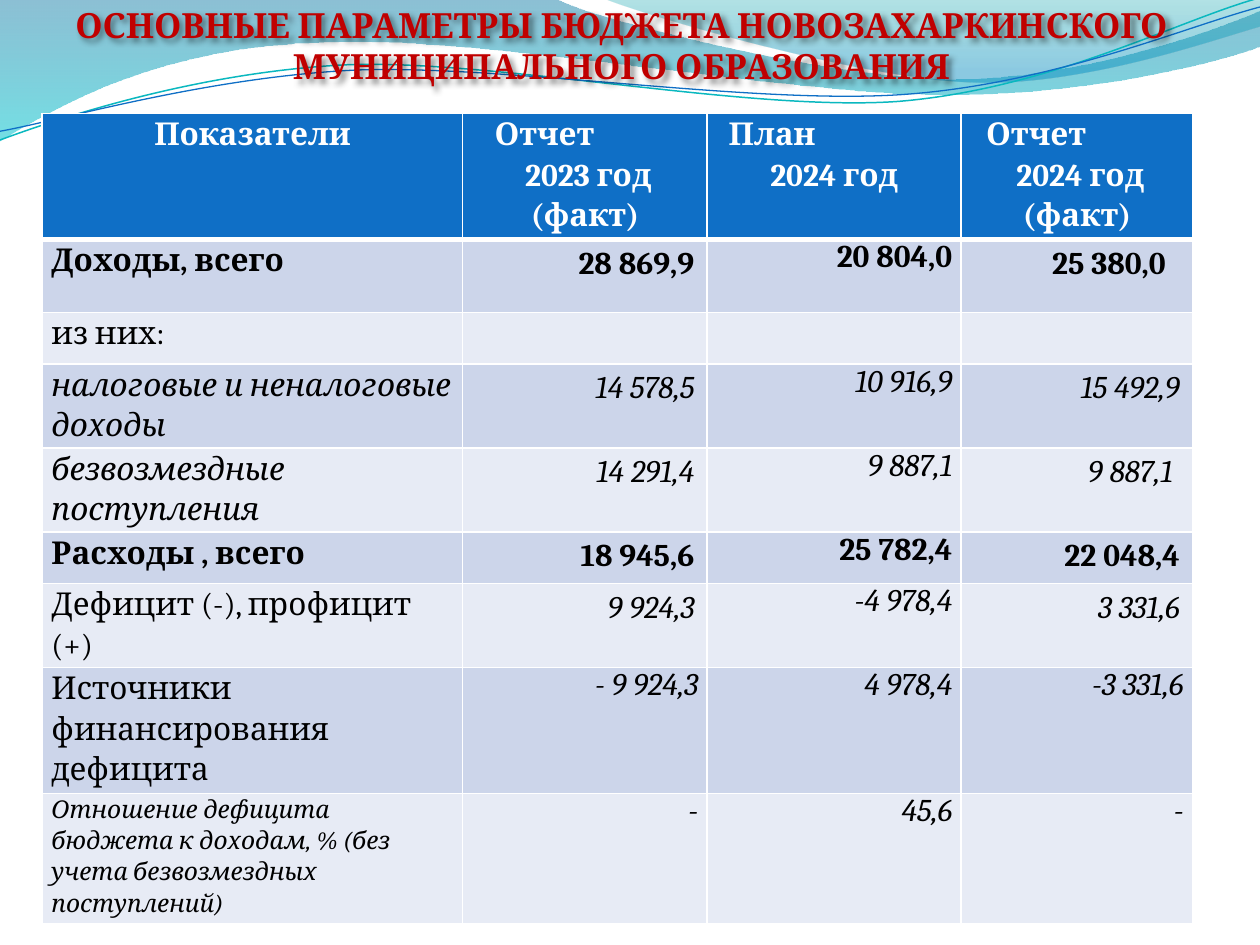
"""Builds a slide with the main budget figures of a municipality in a table."""
from lxml.etree import SubElement
from pptx import Presentation
from pptx.dml.color import RGBColor
from pptx.enum.text import MSO_ANCHOR, PP_ALIGN
from pptx.oxml import parse_xml
from pptx.oxml.ns import nsdecls, qn
from pptx.util import Pt

FONT = "Cambria"
COLORS = {
    "title": "C00000", "header": "0F6FC6", "odd": "CCD5EA", "even": "E7EBF5",
    "white": "FFFFFF", "black": "000000", "teal_line": "0AB8BF", "blue_line": "0F6FC6",
    "deep_blue": "0074A1", "aqua": "00C6CF", "teal": "00A1A9", "blue": "008BBF",
}
TITLE = "ОСНОВНЫЕ ПАРАМЕТРЫ БЮДЖЕТА НОВОЗАХАРКИНСКОГО МУНИЦИПАЛЬНОГО ОБРАЗОВАНИЯ"
HEADERS = [
    (None, "Показатели", 0),
    ("Отчет", " 2023 год (факт)", 13),
    ("План", "2024 год", 7),
    ("Отчет", " 2024 год (факт)", 9),
]
ROWS = [
    ("Доходы, всего", "b", ["28 869,9", "20 804,0", "25 380,0"], "b"),
    ("из них:", "", ["", "", ""], ""),
    ("налоговые и неналоговые доходы", "i", ["14 578,5", "10 916,9", "15 492,9"], "i"),
    ("безвозмездные поступления", "i", ["14 291,4", "9 887,1", "9 887,1"], "i"),
    ("Расходы , всего", "b", ["18 945,6", "25 782,4", "22 048,4"], "b"),
    ("Дефицит (-), профицит (+)", "", ["9 924,3", "-4 978,4", "3 331,6"], "i"),
    ("Источники финансирования дефицита", "", ["- 9 924,3", "4 978,4", "-3 331,6"], "i"),
    ("Отношение дефицита бюджета к доходам, % (без учета безвозмездных поступлений)",
     "i", ["-", "45,6", "-"], "i"),
]
EXTRA_RIGHT = {(1, 3): 8, (4, 3): 4}
COLUMN_WIDTHS = [240.2, 139.8, 145.2, 132.2]
ROW_HEIGHTS = [72, 41.8, 29.5, 48, 46, 29.5, 46, 69, 72]
LAST_TIGHT_ROWS = 2
LABEL_SPACING = 1.11

# Each wave is a start point followed by lines (one point) and Bezier curves (three points).
WAVES = [
    ([[(0, 0)], [(4.4, -0.01)], [(4.76, 0.17), (6.64, 0.63), (7.58, 0.63)],
      [(8.53, 0.63), (9.58, 0.26), (10, 0.09)], [(10.01, 0.36)],
      [(9.83, 0.44), (8.7, 0.76), (7.46, 0.75)], [(6.22, 0.75), (3.82, 0.28), (2.57, 0.34)],
      [(1.29, 0.36), (0.46, 0.83), (-0.01, 1.13)]],
     [("deep_blue", 0, 45), ("aqua", 1, 55)]),
    ([[(4.79, -0.01)], [(5.09, 0.11), (6.82, 0.62), (7.69, 0.65)],
      [(8.56, 0.69), (9.61, 0.32), (10, 0.21)], [(10, 0)]],
     [("teal", 0, 30), ("blue", 0.8, 45)]),
]
STRANDS = [
    ([[(0, 1.11)], [(0.48, 0.93), (1.58, 0.57), (2.77, 0.52)],
      [(3.95, 0.47), (5.93, 0.89), (7.13, 0.8)], [(8.33, 0.71), (9.38, 0.15), (9.98, -0.02)]],
     "teal_line", 0.85),
    ([[(0, 1.04)], [(0.47, 0.96), (1.64, 0.61), (2.83, 0.56)],
      [(4.03, 0.51), (5.97, 0.84), (7.17, 0.75)], [(8.36, 0.67), (9.41, 0.21), (10, 0.06)]],
     "blue_line", 0.75),
]


def rgb(name):
    return RGBColor.from_string(COLORS[name])


def add_curve(slide, segments, close):
    start, *rest = [(x * 72, y * 72) for segment in segments for x, y in segment]
    builder = slide.shapes.build_freeform(*start, scale=Pt(1))
    builder.add_line_segments(rest, close=close)
    curve = builder.convert_to_shape()
    curve.shadow.inherit = False
    steps = iter(list(curve._element.iter(qn("a:lnTo"))))
    for segment in segments[1:]:
        group = [next(steps) for _ in segment]
        if len(group) == 3:
            bezier = parse_xml(f'<a:cubicBezTo {nsdecls("a")}/>')
            group[0].addprevious(bezier)
            for step in group:
                bezier.append(step[0])
                step.getparent().remove(step)
    return curve


def add_waves(slide):
    for segments, stops in WAVES:
        wave = add_curve(slide, segments, True)
        wave.line.fill.background()
        wave.fill.gradient()
        wave.fill.gradient_angle = 270
        for stop, (color, position, _) in zip(wave.fill.gradient_stops, stops):
            stop.color.rgb = rgb(color)
            stop.position = position
        tints = list(wave._element.spPr.iter(qn("a:srgbClr")))
        for tint, (_, _, opacity) in zip(tints, stops):
            SubElement(tint, qn("a:alpha")).set("val", str(opacity * 1000))
    for segments, color, width in STRANDS:
        strand = add_curve(slide, segments, False)
        strand.fill.background()
        strand.line.color.rgb = rgb(color)
        strand.line.width = Pt(width)


def style(paragraph, size, color, marks, align, spacing=None):
    paragraph.alignment = align
    paragraph.line_spacing = spacing
    for run in paragraph.runs:
        run.font.name, run.font.size = FONT, Pt(size)
        run.font.color.rgb = rgb(color)
        run.font.bold, run.font.italic = "b" in marks, "i" in marks


def add_title(slide):
    heading = slide.shapes.add_textbox(Pt(31), Pt(2), Pt(648), Pt(48))
    frame = heading.text_frame
    frame.word_wrap = True
    frame.vertical_anchor = MSO_ANCHOR.TOP
    frame.margin_left = frame.margin_right = frame.margin_top = frame.margin_bottom = 0
    frame.text = TITLE
    style(frame.paragraphs[0], 19.8, "title", "b", PP_ALIGN.CENTER)
    heading._element.spPr.append(parse_xml(
        f'<a:effectLst {nsdecls("a")}><a:outerShdw blurRad="38100" dist="38100" dir="2700000">'
        '<a:srgbClr val="000000"><a:alpha val="43000"/></a:srgbClr></a:outerShdw></a:effectLst>'))


def dress(cell, fill, margins, top, bottom):
    cell.fill.solid()
    cell.fill.fore_color.rgb = rgb(fill)
    cell.margin_left, cell.margin_top, cell.margin_right, cell.margin_bottom = map(Pt, margins)
    edges = [("lnL", 1), ("lnR", 1), ("lnT", top), ("lnB", bottom)]
    for index, (edge, width) in enumerate(edges):
        cell._tc.tcPr.insert(index, parse_xml(
            f'<a:{edge} {nsdecls("a")} w="{Pt(width)}"><a:solidFill>'
            f'<a:srgbClr val="{COLORS["white"]}"/></a:solidFill></a:{edge}>'))


def add_budget(slide):
    budget = slide.shapes.add_table(len(ROWS) + 1, len(HEADERS), Pt(24), Pt(64.8),
                                    Pt(sum(COLUMN_WIDTHS)), Pt(sum(ROW_HEIGHTS))).table
    for column, width in zip(budget.columns, COLUMN_WIDTHS):
        column.width = Pt(width)
    for row, height in zip(budget.rows, ROW_HEIGHTS):
        row.height = Pt(height)
    tight, roomy = (5.4, 0, 5, 0), (7.2, 3.6, 7.2, 3.6)

    for c, (kind, caption, indent) in enumerate(HEADERS):
        cell = budget.cell(0, c)
        dress(cell, "header", tight, 1, 3)
        cell.text_frame.text = "\n".join(filter(None, (kind, caption)))
        for paragraph in cell.text_frame.paragraphs:
            style(paragraph, 18, "white", "b", PP_ALIGN.CENTER, LABEL_SPACING)
        if kind:
            first = cell.text_frame.paragraphs[0]
            first.alignment = PP_ALIGN.LEFT
            first._p.get_or_add_pPr().set("marL", str(Pt(indent)))

    for r, (label, label_marks, values, value_marks) in enumerate(ROWS, 1):
        last = r == len(ROWS)
        for c, entry in enumerate([label, *values]):
            cell = budget.cell(r, c)
            is_tight = c in (0, 2) or r > len(ROWS) - LAST_TIGHT_ROWS
            left, top, right, bottom = tight if is_tight else roomy
            right += EXTRA_RIGHT.get((r, c), 0)
            dress(cell, "odd" if r % 2 else "even", (left, top, right, bottom),
                  3 if r == 1 else 1, 1)
            cell.text_frame.text = entry
            paragraph = cell.text_frame.paragraphs[0]
            if c == 0:
                style(paragraph, 14 if last else 18, "black", label_marks,
                      PP_ALIGN.LEFT, LABEL_SPACING)
            else:
                style(paragraph, 18, "black", value_marks, PP_ALIGN.RIGHT)


def main():
    deck = Presentation()
    deck.slide_width, deck.slide_height = Pt(720), Pt(540)
    slide = deck.slides.add_slide(deck.slide_layouts[6])
    add_waves(slide)
    add_title(slide)
    add_budget(slide)
    deck.save("out.pptx")


if __name__ == "__main__":
    main()
